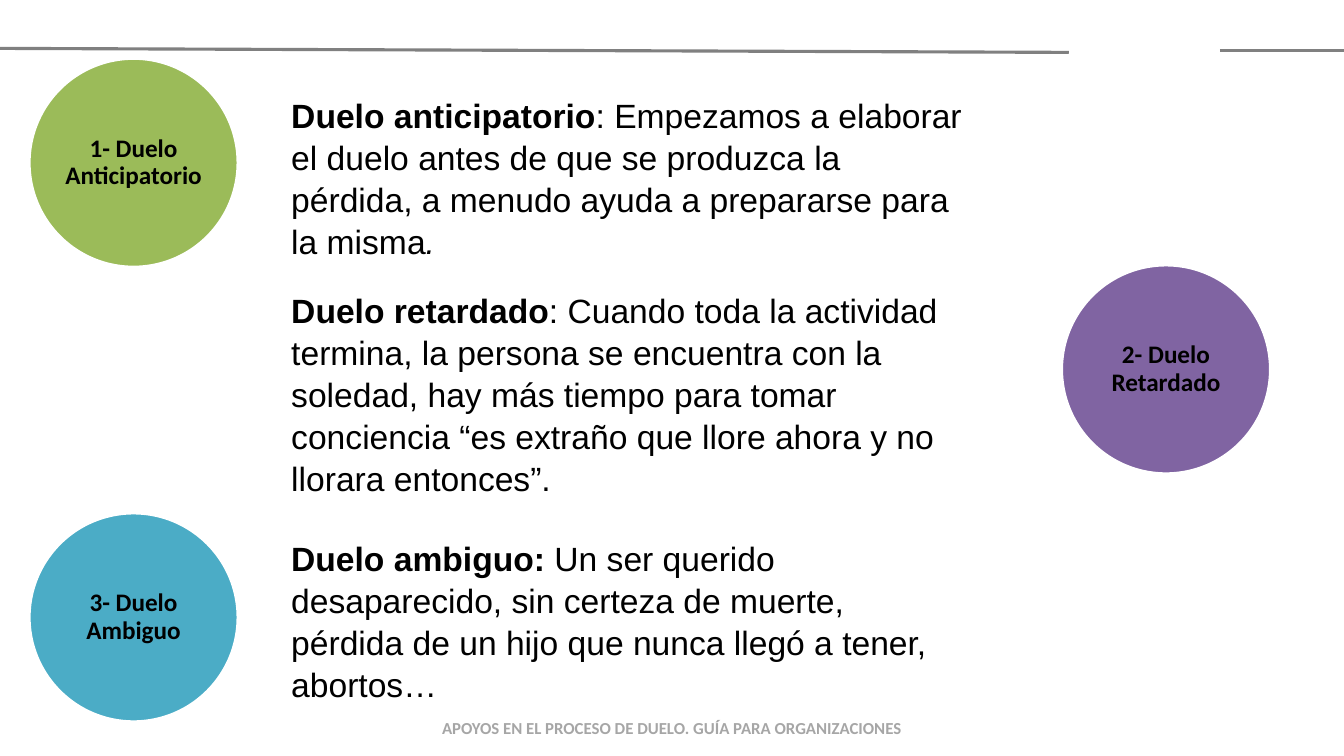
"""Build the slide on three kinds of grief: anticipatory, delayed and ambiguous."""
from pptx import Presentation
from pptx.dml.color import RGBColor
from pptx.enum.shapes import MSO_CONNECTOR as Connector, MSO_SHAPE as Shape
from pptx.enum.text import MSO_ANCHOR as Anchor, PP_ALIGN as Align
from pptx.oxml.ns import qn
from pptx.util import Inches, Pt
from lxml.etree import SubElement

COLORS = {"rule": "808080", "footer": "A6A6A6", "text": "000000", "edge": "FFFFFF",
          "green": "9BBB59", "purple": "8064A2", "blue": "4BACC6"}
SLIDE_WIDTH, SLIDE_HEIGHT = 13.33, 7.5
RULES = [((0, 0.48), (10.6, 0.52)), ((12.1, 0.5), (SLIDE_WIDTH, 0.5))]
FOOTER = "APOYOS EN EL PROCESO DE DUELO. GUÍA PARA ORGANIZACIONES"
DIAMETER = 2.07
CIRCLES = [
    ("1- Duelo Anticipatorio", "green", 0.29, 0.58),
    ("2- Duelo Retardado", "purple", 10.53, 2.63),
    ("3- Duelo Ambiguo", "blue", 0.29, 5.09),
]
TEXT_LEFT = 2.79
DEFINITIONS = [
    (0.88, 6.88, 1.59, [
        ("Duelo anticipatorio", {"bold": True}),
        (": Empezamos a elaborar el duelo antes de que se produzca la pérdida, "
         "a menudo ayuda a prepararse para la misma", {}),
        (".", {"italic": True})]),
    (2.81, 7.18, 2.12, [
        ("Duelo retardado", {"bold": True}),
        (": Cuando toda la actividad termina, la persona se encuentra con la soledad, "
         "hay más tiempo para tomar conciencia “es extraño que llore ahora y no "
         "llorara entonces”.", {})]),
    (5.27, 6.56, 1.72, [
        ("Duelo ambiguo:", {"bold": True}),
        (" Un ser querido desaparecido, sin certeza de muerte, pérdida de un hijo "
         "que nunca llegó a tener, abortos…", {})]),
]


def color(name):
    return RGBColor.from_string(COLORS[name])


def add_span(para, text, size, font="Calibri", fill="text", bold=False, italic=False):
    span = para.add_run()
    span.text = text
    span.font.name, span.font.size = font, Pt(size)
    span.font.bold, span.font.italic = bold, italic
    span.font.color.rgb = color(fill)


def add_box(slide, left, top, width, height):
    box = slide.shapes.add_textbox(*map(Inches, (left, top, width, height)))
    box.text_frame.word_wrap = True
    return box.text_frame.paragraphs[0]


def add_rule(slide, start, end):
    rule = slide.shapes.add_connector(Connector.STRAIGHT, *map(Inches, start + end))
    rule.line.color.rgb = color("rule")
    rule.line.width = Pt(2.25)
    SubElement(rule._element.spPr, qn("a:effectLst"))


def add_circle(slide, label, fill, left, top):
    circle = slide.shapes.add_shape(Shape.OVAL, *map(Inches, (left, top, DIAMETER, DIAMETER)))
    circle.shadow.inherit = False
    circle.fill.solid()
    circle.fill.fore_color.rgb = color(fill)
    circle.line.color.rgb = color("edge")
    circle.line.width = Pt(2)
    frame = circle.text_frame
    frame.word_wrap = True
    frame.vertical_anchor = Anchor.MIDDLE
    frame.margin_left = frame.margin_right = Inches(0.03)
    frame.margin_top = frame.margin_bottom = Inches(0.03)
    para = frame.paragraphs[0]
    para.alignment = Align.CENTER
    para.line_spacing = 0.9
    add_span(para, label, 18, bold=True)


def main():
    deck = Presentation()
    deck.slide_width, deck.slide_height = Inches(SLIDE_WIDTH), Inches(SLIDE_HEIGHT)
    slide = deck.slides.add_slide(deck.slide_layouts[6])
    for start, end in RULES:
        add_rule(slide, start, end)
    footer = add_box(slide, 0, 7.07, SLIDE_WIDTH, 0.3)
    footer.alignment = Align.CENTER
    add_span(footer, FOOTER, 12, fill="footer", bold=True)
    for circle in CIRCLES:
        add_circle(slide, *circle)
    for top, width, height, spans in DEFINITIONS:
        para = add_box(slide, TEXT_LEFT, top, width, height)
        para.line_spacing = 1.04
        for text, style in spans:
            add_span(para, text, 24, font="Arial", **style)
    deck.save("out.pptx")


if __name__ == "__main__":
    main()
